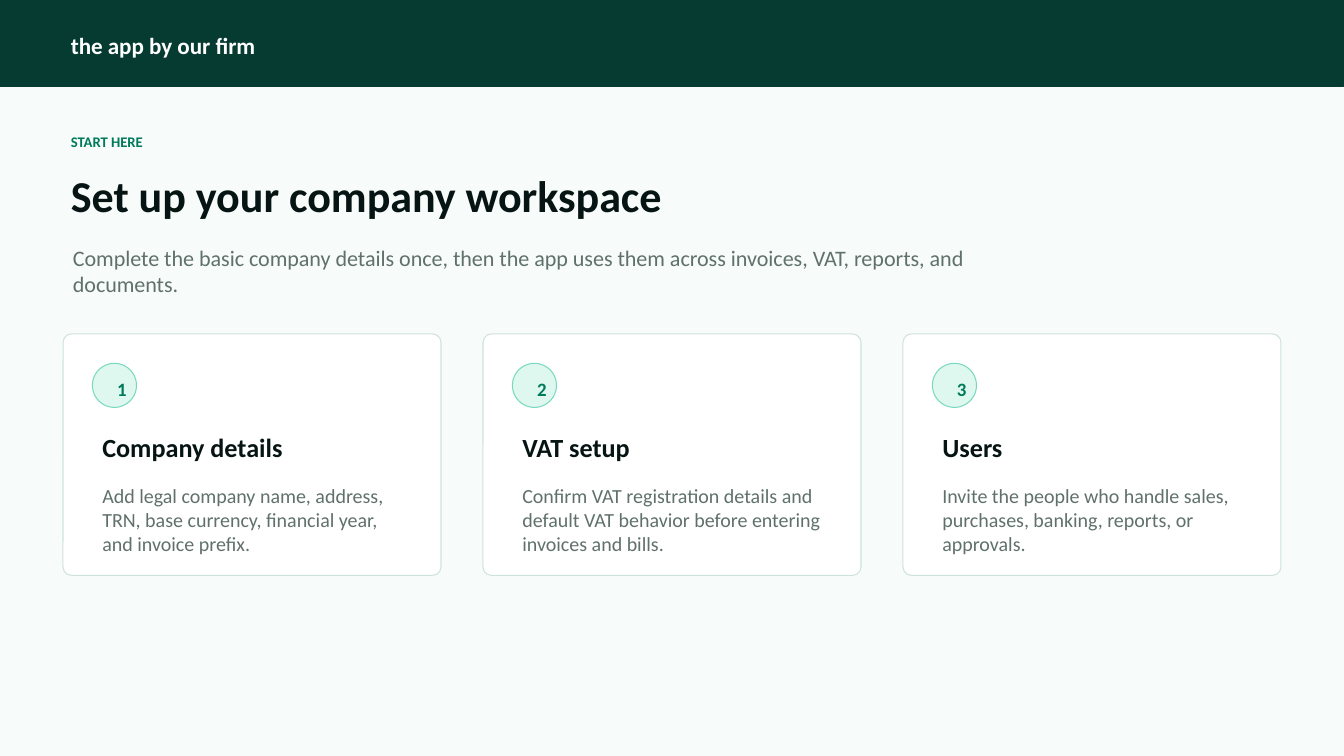
import pptx
import pptx.util
import pptx.dml.color
import pptx.enum.shapes

Pt = pptx.util.Pt
RGB = pptx.dml.color.RGBColor
KIND = pptx.enum.shapes.MSO_SHAPE

PAGE = RGB(0xF7, 0xFB, 0xFA)
PINE = RGB(0x05, 0x3B, 0x31)
WHITE = RGB(0xFF, 0xFF, 0xFF)
GREEN = RGB(0x00, 0x7A, 0x5A)
INK = RGB(0x06, 0x15, 0x13)
GREY = RGB(0x60, 0x71, 0x6C)
EDGE = RGB(0xCF, 0xE2, 0xDC)
MINT = RGB(0xDF, 0xF8, 0xEF)
RING = RGB(0x79, 0xD9, 0xBF)

STYLES = {
    "brand": ({"size": Pt(16.5), "bold": True}, WHITE),
    "label": ({"size": Pt(10.5), "bold": True}, GREEN),
    "title": ({"size": Pt(31.5), "bold": True}, INK),
    "intro": ({"size": Pt(15.75), "bold": False}, GREY),
    "count": ({"size": Pt(13.5), "bold": True}, GREEN),
    "head": ({"size": Pt(18.75), "bold": True}, INK),
    "body": ({"size": Pt(14.25), "bold": False}, GREY),
}

TOP = [
    ("the app by our firm", "brand", (43.5, 18.75, 210, 25.5)),
    ("START HERE", "label", (43.5, 91.5, 322.5, 21)),
    ("Set up your company workspace", "title", (43.5, 117, 675, 49.5)),
    ("Complete the basic company details once, then the app uses them "
     "across invoices, VAT, reports, and documents.",
     "intro", (45, 171, 720, 36)),
]

STEPS = [
    ("Company details",
     "Add legal company name, address, TRN, base currency, "
     "financial year, and invoice prefix."),
    ("VAT setup",
     "Confirm VAT registration details and default VAT behavior "
     "before entering invoices and bills."),
    ("Users",
     "Invite the people who handle sales, purchases, banking, "
     "reports, or approvals."),
]

LEFT, PITCH, PAD = 45, 300, 21


def draw(slide, kind, box, fill, line):
    shape = slide.shapes.add_shape(kind, *map(Pt, box))
    shape.shadow.inherit = False
    shape.fill.solid()
    shape.fill.fore_color.rgb = fill
    shape.line.color.rgb = line
    shape.line.width = Pt(0.75)
    return shape


def write(slide, text, style, box):
    frame = slide.shapes.add_textbox(*map(Pt, box)).text_frame
    frame.word_wrap = True
    run = frame.paragraphs[0].add_run()
    run.text = text
    look, color = STYLES[style]
    for key, value in {"name": "Calibri", **look}.items():
        setattr(run.font, key, value)
    run.font.color.rgb = color


def main():
    deck = pptx.Presentation()
    deck.slide_width, deck.slide_height = Pt(960), Pt(540)
    slide = deck.slides.add_slide(deck.slide_layouts[6])
    slide.background.fill.solid()
    slide.background.fill.fore_color.rgb = PAGE

    draw(slide, KIND.RECTANGLE, (0, 0, 960, 61.5), PINE, PINE)
    for text, style, box in TOP:
        write(slide, text, style, box)

    for index, (head, body) in enumerate(STEPS):
        left = LEFT + index * PITCH
        inner = left + PAD
        card = draw(slide, KIND.ROUNDED_RECTANGLE,
                    (left, 238.5, 270, 172.5), WHITE, EDGE)
        card.adjustments[0] = 0.035
        draw(slide, KIND.OVAL, (inner, 259.5, 31.5, 31.5), MINT, RING)
        write(slide, str(index + 1), "count", (inner + 10.5, 266.25, 15, 18))
        write(slide, head, "head", (inner, 304.5, 228, 31.5))
        write(slide, body, "body", (inner, 342, 228, 52.5))

    deck.save("out.pptx")


if __name__ == "__main__":
    main()
